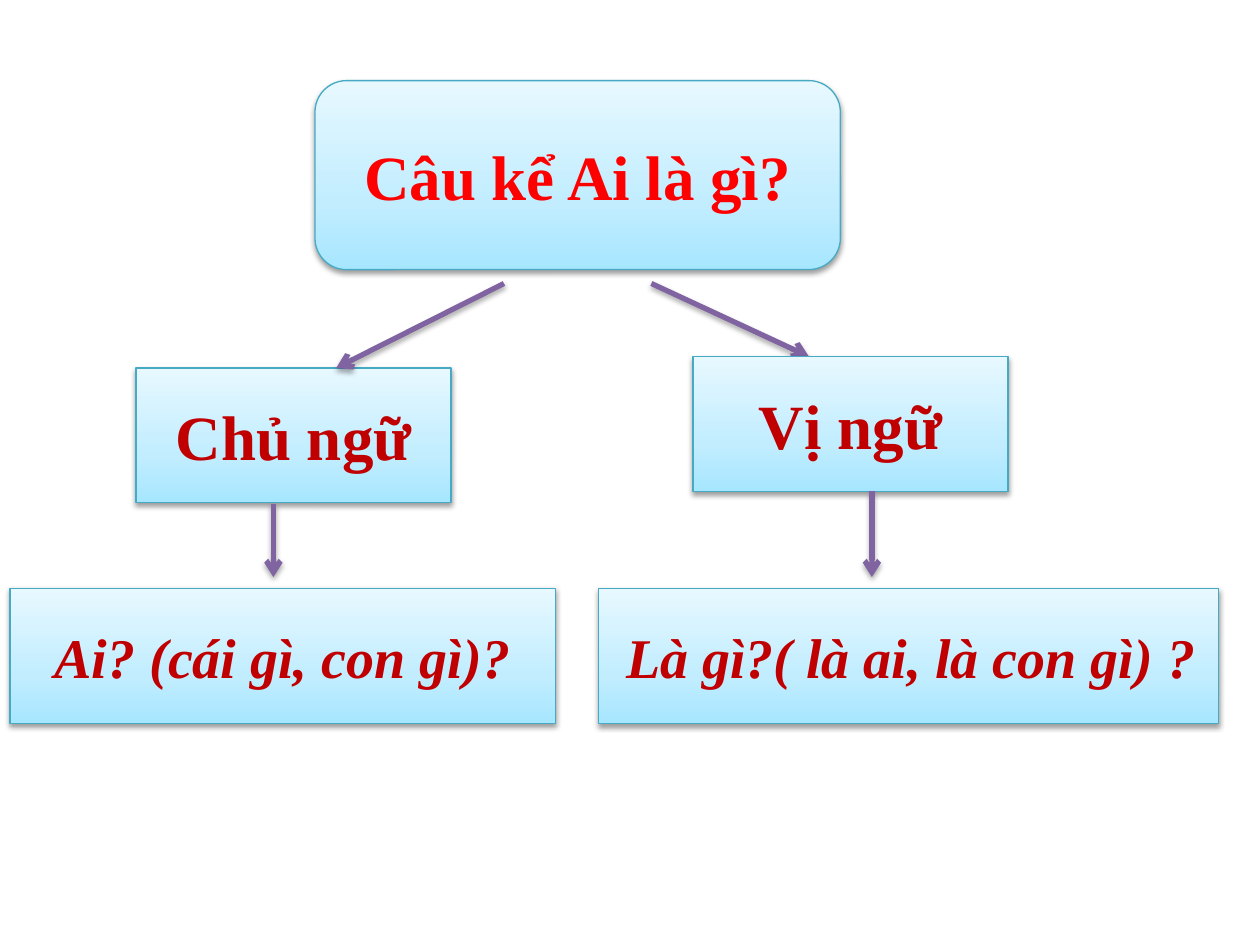
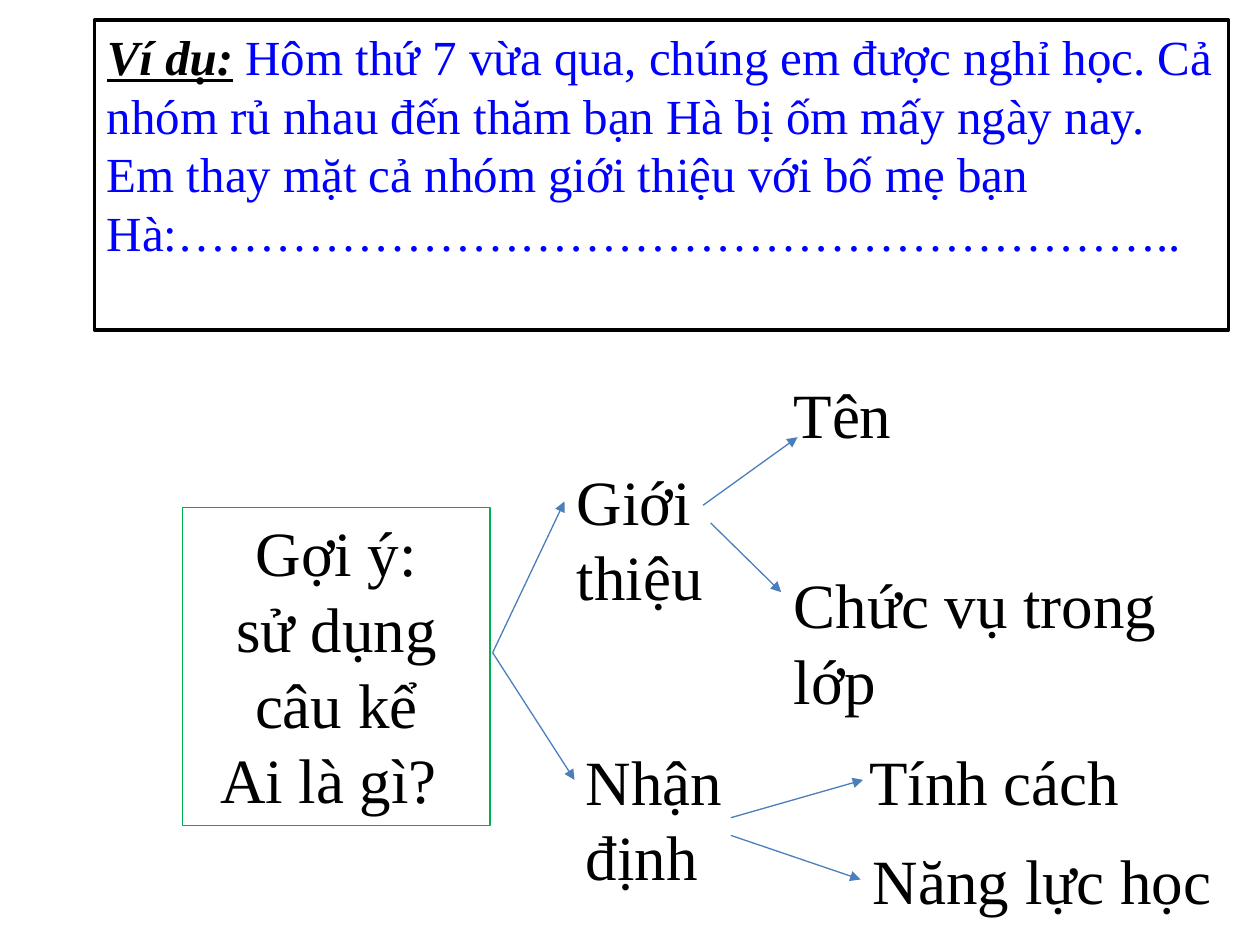
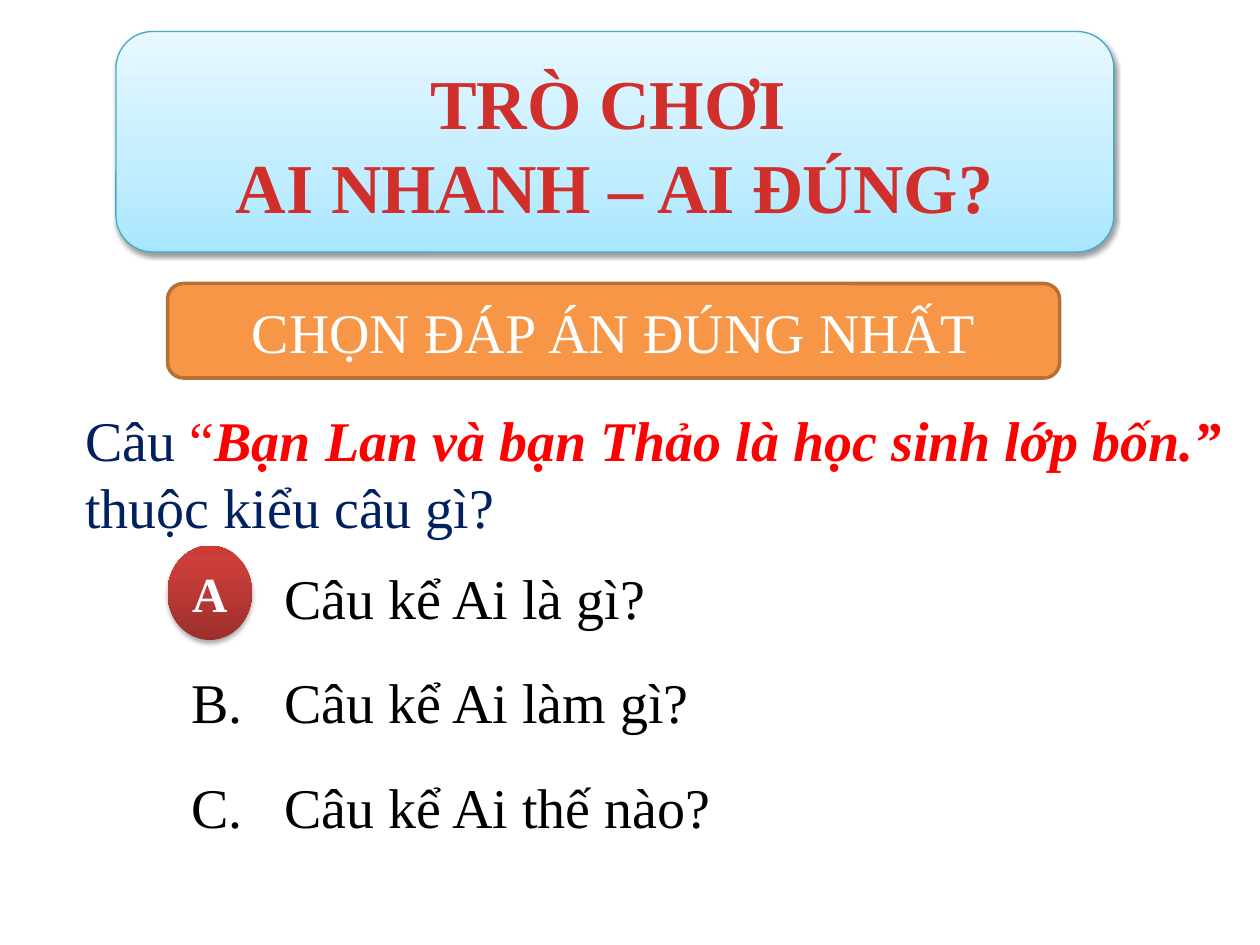
"""Builds three lesson slides on the Vietnamese "Ai là gì?" sentence."""
from lxml import etree
from pptx import Presentation
from pptx import util as u
from pptx.dml.color import RGBColor
from pptx.enum import shapes, text
from pptx.oxml import ns

PX = 9144
FACE = "Times New Roman"
HUES = {
    "red": "FF0000", "brick": "C00000", "black": "000000", "white": "FFFFFF",
    "blue": "0000FF", "navy": "002060", "teal": "46AAC5", "plum": "8064A2",
    "steel": "4B7EBC", "green": "00B050", "amber": "F79646", "rust": "B76F34",
}
BLENDS = {
    "sky": (90, [(0, "A7E6FF"), (35, "C1EDFF"), (100, "E7F8FF")]),
    "ruby": (90, [(0, "9C2F2D"), (80, "CB3E3A"), (100, "CE3B37")]),
    "flame": (270, [(0, "FC7C7A"), (75, "D02F2C"), (100, "C70500")]),
}
RECT, ROUND, OVAL = (shapes.MSO_SHAPE.RECTANGLE,
                     shapes.MSO_SHAPE.ROUNDED_RECTANGLE, shapes.MSO_SHAPE.OVAL)
MID = text.MSO_ANCHOR.MIDDLE
TOP = text.MSO_ANCHOR.TOP
LEFT = text.PP_ALIGN.LEFT
MIDST = text.PP_ALIGN.CENTER
SOFT = {"blurRad": 40000, "dist": 20000, "alpha": 38000}
DEEP = {"blurRad": 40000, "dist": 23000, "alpha": 35000}

LOOKS = {
    "card": dict(form=RECT, fill="sky", line="teal", width=0.75, shade=SOFT, anchor=MID, align=MIDST),
    "ask": dict(form=RECT, fill="sky", line="teal", width=0.75, shade=SOFT, anchor=MID, margin=12),
    "head": dict(form=ROUND, fill="sky", line="teal", width=0.75, shade=SOFT, anchor=MID, align=MIDST),
    "bar": dict(form=ROUND, fill="amber", line="rust", width=2, anchor=MID, align=MIDST),
    "badge": dict(form=OVAL, fill="ruby", shade=DEEP, anchor=MID, align=MIDST),
    "frame": dict(form=RECT, fill="white", line="black", width=2),
    "hint": dict(form=RECT, line="green", width=0.75, align=MIDST),
    "title": dict(align=MIDST),
    "note": dict(),
    "choice": dict(margin=74, indent=-74),
    "stem": dict(line="plum", width=3, tip="arrow", shade=DEEP),
    "wire": dict(line="steel", width=0.75, tip="triangle"),
}
TONES = {
    "topic": ("red", dict(size=36, bold=True)),
    "part": ("brick", dict(size=36, bold=True)),
    "query": ("brick", dict(size=32, bold=True, italic=True)),
    "label": ("black", dict(size=28, bold=True, italic=True, underline=True)),
    "story": ("blue", dict(size=28)),
    "idea": ("black", dict(size=36)),
    "game": ("flame", dict(size=40, bold=True)),
    "task": ("white", dict(size=32)),
    "lead": ("navy", dict(size=32)),
    "quote": ("red", dict(size=32)),
    "sample": ("red", dict(size=32, bold=True, italic=True)),
    "reply": ("black", dict(size=32)),
    "mark": ("white", dict(size=28, bold=True)),
}

PARTS = [
    ("head", (250, 64, 417, 150), [[("topic", "Câu kể Ai là gì?")]]),
    ("card", (108, 292, 250, 107), [[("part", "Chủ ngữ")]]),
    ("stem", (400, 225, 267, 292), None),
    ("stem", (517, 225, 642, 283), None),
    ("card", (550, 283, 250, 107), [[("part", "Vị ngữ")]]),
    ("card", (8, 467, 433, 107), [[("query", "Ai? (cái gì, con gì)?")]]),
    ("ask", (475, 467, 492, 107), [[("query", "Là gì?( là ai, là con gì) ?")]]),
    ("stem", (217, 400, 217, 458), None),
    ("stem", (692, 390, 692, 458), None),
]
STORY = ("Hôm thứ 7 vừa qua, chúng em được nghỉ học. Cả nhóm rủ nhau đến thăm "
         "bạn Hà bị ốm mấy ngày nay. Em thay mặt cả nhóm giới thiệu với bố mẹ "
         "bạn Hà:……………………………………………………..")
HINTS = ["Gợi ý:", "sử dụng câu kể", "Ai là gì? "]
IDEAS = [
    ((448, 362, 192, 131), "Giới thiệu"), ((455, 584, 178, 131), "Nhận định"),
    ((620, 293, 158, 71), "Tên"), ((620, 444, 313, 131), "Chức vụ trong lớp"),
    ((680, 584, 253, 71), "Tính cách"), ((683, 663, 292, 71), "Năng lực học"),
]
WIRES = [
    (391, 518, 448, 398), (391, 518, 456, 619), (558, 401, 633, 347),
    (564, 415, 620, 470), (580, 649, 685, 619), (580, 663, 683, 698),
]
SAMPLE = [
    ("frame", (75, 16, 900, 246), [[("label", "Ví dụ:"), ("story", " " + STORY)]]),
    ("hint", (145, 403, 244, 252), [[("idea", line)] for line in HINTS]),
    *[("note", at, [[("idea", word)]]) for at, word in IDEAS],
    *[("wire", ends, None) for ends in WIRES],
]
CHOICES = ["A.\tCâu kể Ai là gì?", "B.\tCâu kể Ai làm gì?", "C.\tCâu kể Ai thế nào?"]
GAME = [
    ("head", (92, 25, 792, 175), []),
    ("title", (117, 42, 731, 145), [[("game", "TRÒ CHƠI")], [("game", " AI NHANH – AI ĐÚNG?")]]),
    ("bar", (133, 225, 708, 75), [[("task", "CHỌN ĐÁP ÁN ĐÚNG NHẤT")]]),
    ("note", (58, 317, 925, 118), [[
        ("lead", "Câu "), ("quote", "“"),
        ("sample", "Bạn Lan và bạn Thảo là học sinh lớp bốn.” "),
        ("lead", "thuộc kiểu câu gì?")]]),
    *[("choice", (142, 442 + 83 * row, 600, 118), [[("reply", line)]])
      for row, line in enumerate(CHOICES)],
    ("badge", (133, 433, 67, 75), [[("mark", "A")]]),
]


def add(node, tag, **vals):
    return etree.SubElement(node, ns.qn("a:" + tag), {k: str(v) for k, v in vals.items()})


def paint(fill, hue, node):
    if hue in HUES:
        fill.solid()
        fill.fore_color.rgb = RGBColor.from_string(HUES[hue])
    elif hue in BLENDS:
        angle, stops = BLENDS[hue]
        fill.gradient()
        fill.gradient_angle = angle
        bands = next(node.iter(ns.qn("a:gsLst")))
        bands[:] = []
        for pos, tint in stops:
            add(add(bands, "gs", pos=pos * 1000), "srgbClr", val=tint)
    else:
        fill.background()


deck = Presentation()
deck.slide_width, deck.slide_height = 1000 * PX, 750 * PX
for items in (PARTS, SAMPLE, GAME):
    slide = deck.slides.add_slide(deck.slide_layouts[6])
    for kind, at, paras in items:
        look = LOOKS[kind]
        spot = [v * PX for v in at]
        if "tip" in look:
            item = slide.shapes.add_connector(shapes.MSO_CONNECTOR.STRAIGHT, *spot)
        elif "form" in look:
            item = slide.shapes.add_shape(look["form"], *spot)
        else:
            item = slide.shapes.add_textbox(*spot)
        props = item.element.spPr
        if "tip" not in look:
            paint(item.fill, look.get("fill"), props)
        paint(item.line.fill, look.get("line"), props)
        if "width" in look:
            item.line.width = u.Pt(look["width"])
        if "tip" in look:
            add(props.find(ns.qn("a:ln")), "tailEnd", type=look["tip"])
        effects = add(props, "effectLst")
        if "shade" in look:
            shade = dict(look["shade"])
            alpha = shade.pop("alpha")
            cast = add(effects, "outerShdw", dir=5400000, rotWithShape=0, **shade)
            add(add(cast, "srgbClr", val=HUES["black"]), "alpha", val=alpha)
        if not paras:
            continue
        frame = item.text_frame
        frame.word_wrap = True
        frame.vertical_anchor = look.get("anchor", TOP)
        for num, runs in enumerate(paras):
            para = frame.add_paragraph() if num else frame.paragraphs[0]
            para.alignment = look.get("align", LEFT)
            if "margin" in look:
                inset = para._p.get_or_add_pPr()
                inset.set("marL", str(look["margin"] * PX))
                inset.set("indent", str(look.get("indent", 0) * PX))
            for tone, words in runs:
                run = para.add_run()
                run.text = words
                hue, style = TONES[tone]
                paint(run.font.fill, hue, run._r)
                for key, val in {**style, "size": u.Pt(style["size"]), "name": FACE}.items():
                    setattr(run.font, key, val)
deck.save("out.pptx")
